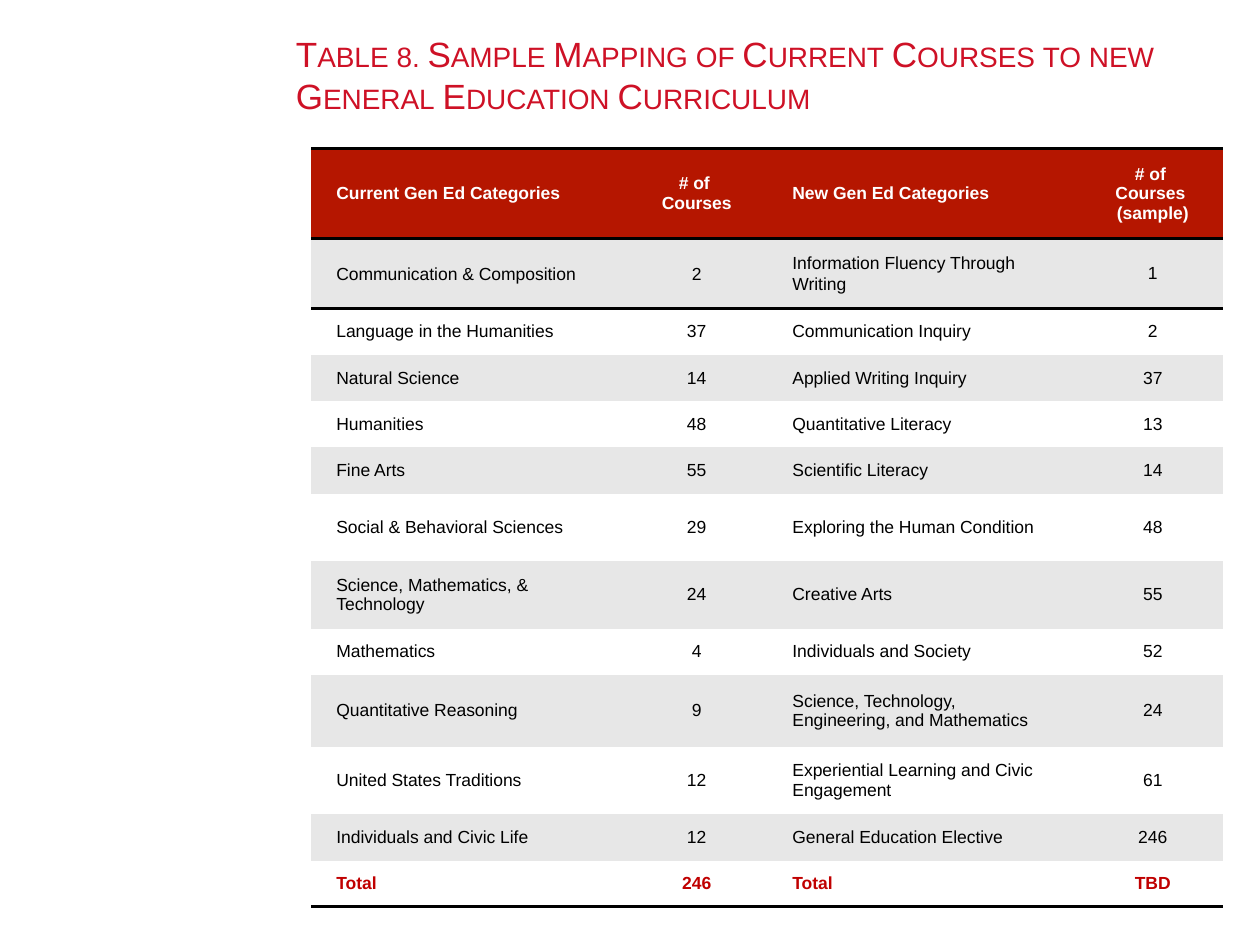
from lxml.etree import SubElement
from pptx import Presentation
from pptx.dml.color import RGBColor
from pptx.enum.text import MSO_ANCHOR, PP_ALIGN
from pptx.oxml.ns import qn
from pptx.util import Pt

COLORS = {"title": "CE1126", "header": "B51600", "band": "E7E7E7", "white": "FFFFFF",
          "black": "000000", "total": "C00000"}
NO_STYLE = "{2D5ABB26-0587-4C30-8999-92F81FD0307C}"
ROWS = [
    ("Current Gen Ed Categories", "# of \nCourses", "New Gen Ed Categories",
     "# of \nCourses \n(sample)"),
    ("Communication & Composition", "2", "Information Fluency Through Writing", "1"),
    ("Language in the Humanities", "37", "Communication Inquiry", "2"),
    ("Natural Science", "14", "Applied Writing Inquiry", "37"),
    ("Humanities", "48", "Quantitative Literacy", "13"),
    ("Fine Arts", "55", "Scientific Literacy", "14"),
    ("Social & Behavioral Sciences", "29", "Exploring the Human Condition", "48"),
    ("Science, Mathematics, & Technology", "24", "Creative Arts", "55"),
    ("Mathematics", "4", "Individuals and Society", "52"),
    ("Quantitative Reasoning", "9", "Science, Technology, Engineering, and Mathematics", "24"),
    ("United States Traditions", "12", "Experiential Learning and Civic Engagement", "61"),
    ("Individuals and Civic Life", "12", "General Education Elective", "246"),
    ("Total", "246", "Total", "TBD"),
]
COL_WIDTHS = [180, 80.64] * 2
ROW_HEIGHTS = [51.2, 39.2] + [26.1] * 4 + [38.6, 38.6, 26.1, 41, 38.6, 26.1, 26.1]
LAST = len(ROWS) - 1


def style_font(font, color, **values):
    font.color.rgb = RGBColor.from_string(COLORS[color])
    for name, value in {"name": "Arial", **values}.items():
        setattr(font, name, value)


def add_border(cell, tag):
    """Draw one cell edge, lnT or lnB, as a solid 2 pt black line."""
    ln = SubElement(cell._tc.get_or_add_tcPr(), qn(f"a:{tag}"), w=str(Pt(2)))
    fill = SubElement(ln, qn("a:solidFill"))
    SubElement(fill, qn("a:srgbClr"), val=COLORS["black"])


prs = Presentation()
prs.slide_width, prs.slide_height = Pt(720), Pt(540)
s = prs.slides.add_slide(prs.slide_layouts[6])

# Title
tf = s.shapes.add_textbox(Pt(162), Pt(21.6), Pt(522), Pt(41.8)).text_frame
tf.word_wrap = True
tf.vertical_anchor = MSO_ANCHOR.MIDDLE
r = tf.paragraphs[0].add_run()
r.text = "Table 8. Sample Mapping of Current Courses to new General Education Curriculum"
style_font(r.font, "title", size=Pt(20))
r.font._element.set("cap", "small")

# Course mapping table
table = s.shapes.add_table(len(ROWS), len(COL_WIDTHS), Pt(177.8), Pt(85),
                           Pt(sum(COL_WIDTHS)), Pt(sum(ROW_HEIGHTS))).table
table._tbl.tblPr.find(qn("a:tableStyleId")).text = NO_STYLE
for column, width in zip(table.columns, COL_WIDTHS):
    column.width = Pt(width)

cell_format = {"margin_left": Pt(14.4), "margin_right": Pt(14.4), "margin_top": Pt(7.2),
               "margin_bottom": Pt(7.2), "vertical_anchor": MSO_ANCHOR.MIDDLE}
for i, (row, height) in enumerate(zip(ROWS, ROW_HEIGHTS)):
    table.rows[i].height = Pt(height)
    fill = "header" if i == 0 else "band" if i % 2 else "white"
    color = {0: "white", LAST: "total"}.get(i, "black")
    edges = {0: ["lnT", "lnB"], 1: ["lnT"], LAST: ["lnB"]}.get(i, [])
    for j, text in enumerate(row):
        cell = table.cell(i, j)
        for name, value in cell_format.items():
            setattr(cell, name, value)
        for tag in edges:
            add_border(cell, tag)
        cell.fill.solid()
        cell.fill.fore_color.rgb = RGBColor.from_string(COLORS[fill])
        cell.text = text
        for p in cell.text_frame.paragraphs:
            p.alignment = PP_ALIGN.CENTER if j % 2 else PP_ALIGN.LEFT
            if i == 1 and j < 3:
                p.line_spacing = 1.07
            style_font(p.runs[0].font, color, size=Pt(10), bold=i in (0, LAST))

prs.save("out.pptx")
